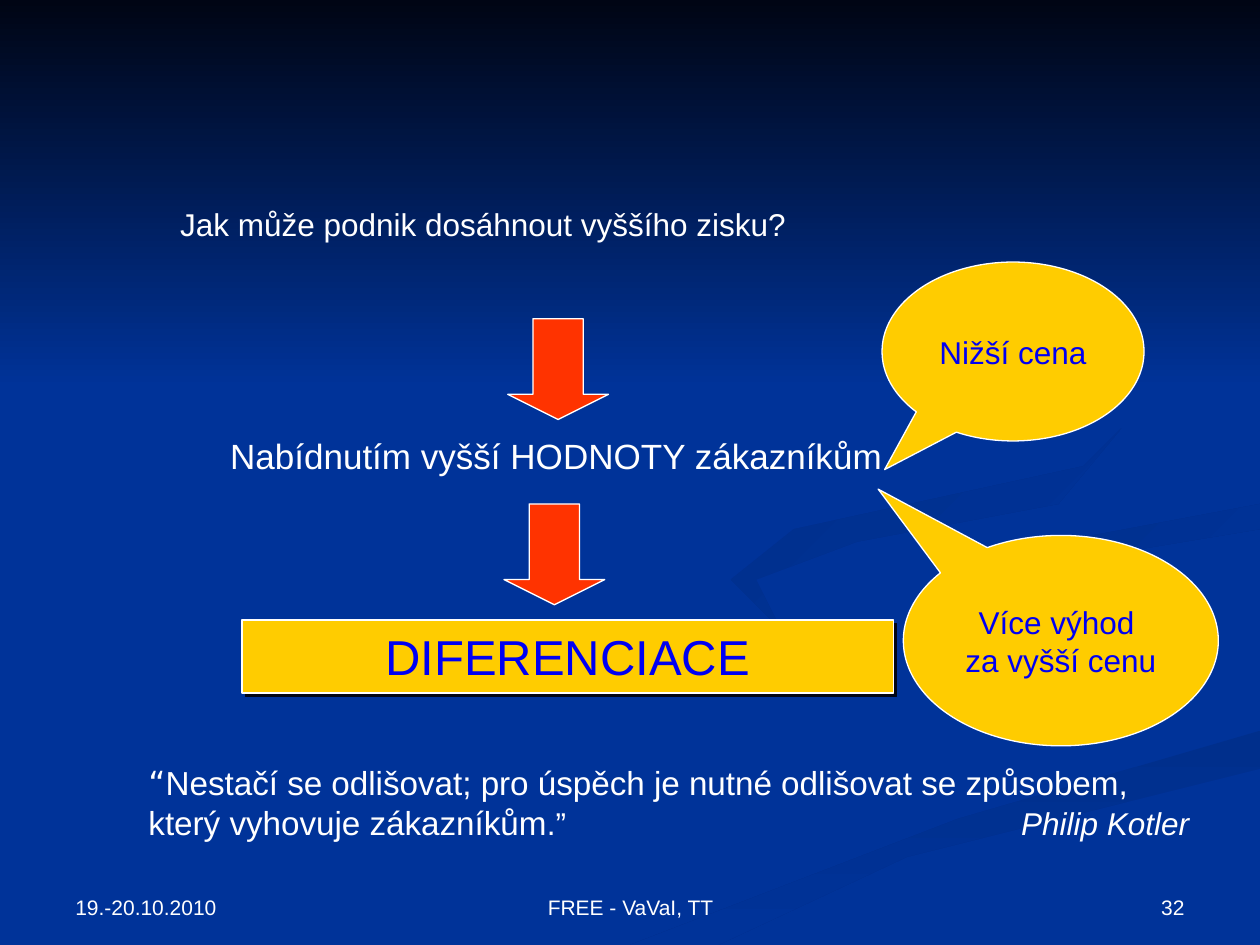
from dataclasses import dataclass
from typing import Any, NamedTuple

from lxml.etree import SubElement
from pptx import Presentation
from pptx.dml.color import RGBColor
from pptx.enum.shapes import MSO_SHAPE
from pptx.enum.text import MSO_ANCHOR, PP_ALIGN
from pptx.oxml.ns import qn
from pptx.util import Inches, Pt


@dataclass(frozen=True)
class Theme:
    background: str = "003399"
    shade: str = "002F8C"
    night: str = "000514"
    white: str = "FFFFFF"
    yellow: str = "FFCC00"
    red: str = "FF3300"
    blue: str = "0000F2"
    font: str = "Arial"
    quote_font: str = "DejaVu Sans"
    footer: float = 12
    body: float = 18
    quote: float = 19
    answer: float = 20
    banner: float = 28
    outline: float = 0.75


THEME = Theme()


class Box(NamedTuple):
    left: float
    top: float
    width: float
    height: float


class Run(NamedTuple):
    text: str
    size: float
    font: str = THEME.font
    italic: bool = False


class Wave(NamedTuple):
    angle: int
    points: tuple[tuple[float, float], ...]


@dataclass(frozen=True)
class Label:
    box: Box
    paragraphs: tuple[tuple[Run, ...], ...]
    alignment: Any = PP_ALIGN.LEFT
    anchor: Any = MSO_ANCHOR.TOP
    color: str = THEME.white
    wrap: bool = True


@dataclass(frozen=True)
class Figure:
    kind: Any
    box: Box
    fill: str
    adjustments: tuple[float, ...] = ()
    label: Label | None = None


def apply(target: Any, values: dict[str, Any]) -> None:
    for name, value in values.items():
        setattr(target, name, value)


def write(shape: Any, label: Label) -> None:
    frame = shape.text_frame
    apply(frame, {"word_wrap": label.wrap, "vertical_anchor": label.anchor})
    for index, runs in enumerate(label.paragraphs):
        paragraph = frame.add_paragraph() if index else frame.paragraphs[0]
        apply(paragraph, {"alignment": label.alignment, "space_before": Pt(0)})
        for item in runs:
            run = paragraph.add_run()
            run.text = item.text
            apply(run.font, {"name": item.font, "size": Pt(item.size), "italic": item.italic})
            run.font.color.rgb = RGBColor.from_string(label.color)


def draw_label(slide: Any, label: Label) -> Any:
    shape = slide.shapes.add_textbox(*map(Inches, label.box))
    write(shape, label)
    return shape


def draw_figure(slide: Any, figure: Figure) -> Any:
    shape = slide.shapes.add_shape(figure.kind, *map(Inches, figure.box))
    shape.shadow.inherit = False
    for index, value in enumerate(figure.adjustments):
        shape.adjustments[index] = value
    shape.fill.solid()
    shape.fill.fore_color.rgb = RGBColor.from_string(figure.fill)
    shape.line.color.rgb = RGBColor.from_string(THEME.white)
    shape.line.width = Pt(THEME.outline)
    if figure.label:
        write(shape, figure.label)
    return shape


def shade(shape: Any, start: str, end: str, angle: int) -> None:
    shape.shadow.inherit = False
    shape.line.fill.background()
    shape.fill.gradient()
    shape.fill.gradient_angle = -angle % 360
    for stop, color in zip(shape.fill.gradient_stops, (start, end)):
        stop.color.rgb = RGBColor.from_string(color)


def draw_wave(slide: Any, wave: Wave) -> None:
    first, *others = [(Inches(x), Inches(y)) for x, y in wave.points]
    builder = slide.shapes.build_freeform(*first, scale=1.0)
    builder.add_line_segments(others, close=True)
    shade(builder.convert_to_shape(), THEME.shade, THEME.background, wave.angle)


def add_hard_shadow(shape: Any) -> None:
    effects = shape._element.spPr.find(qn("a:effectLst"))
    shadow = SubElement(effects, qn("a:outerShdw"), dist=str(Pt(2.8)), dir="2700000", algn="ctr", rotWithShape="0")
    SubElement(shadow, qn("a:srgbClr"), val=THEME.night)


def add_right_tab(paragraph: Any, position: float) -> None:
    tabs = SubElement(paragraph._p.get_or_add_pPr(), qn("a:tabLst"))
    SubElement(tabs, qn("a:tab"), pos=str(Inches(position)), algn="r")


def remove_bullet(paragraph: Any) -> None:
    properties = paragraph._p.get_or_add_pPr()
    for name in ("marL", "indent"):
        properties.set(name, "0")
    SubElement(properties, qn("a:buNone"))


def line(text: str, size: float) -> tuple[Run, ...]:
    return (Run(text, size),)


def callout(box: Box, adjustments: tuple[float, float], *lines: str) -> Figure:
    paragraphs = tuple(line(text, THEME.body) for text in lines)
    label = Label(box, paragraphs, PP_ALIGN.CENTER, MSO_ANCHOR.MIDDLE, THEME.blue, False)
    return Figure(MSO_SHAPE.OVAL_CALLOUT, box, THEME.yellow, adjustments, label)


WAVES = (
    Wave(90, ((5, 7.5), (5.7, 7.5), (7.2, 6.8), (10, 6.1), (10, 5.8), (7.6, 6.5))),
    Wave(45, ((7.8, 4.6), (8.2, 4.9), (8.1, 4.7), (8.8, 4.4), (10, 4.2), (10, 4), (8.4, 4.3))),
    Wave(45, ((6.8, 4.3), (8.4, 4), (8.9, 3.4), (8.6, 3.7), (6.3, 4.2), (5.8, 4.6), (6.2, 5), (6, 4.6))),
)
QUESTION = Label(Box(1.33, 1.58, 8.08, 5), (line("Jak může podnik dosáhnout vyššího zisku?", THEME.body),))
ANSWER = Label(Box(1.33, 3.4, 6.17, 0.44), (line("Nabídnutím vyšší HODNOTY zákazníkům", THEME.answer),), PP_ALIGN.CENTER)
BANNER_BOX = Box(1.92, 4.92, 5.17, 0.58)
BANNER = Figure(MSO_SHAPE.RECTANGLE, BANNER_BOX, THEME.yellow, label=Label(
    BANNER_BOX, (line("DIFERENCIACE", THEME.banner),), PP_ALIGN.CENTER, color=THEME.blue))
FIGURES = (
    *(Figure(MSO_SHAPE.DOWN_ARROW, Box(left, top, 0.8, 0.8), THEME.red)
      for left, top in ((4.03, 2.53), (4, 4))),
    callout(Box(7, 2.08, 2.08, 1.42), (-0.49, 0.66), "Nižší cena"),
    callout(Box(7.17, 4.25, 2.5, 1.67), (-0.58, -0.72), "Více výhod ", "za vyšší cenu"),
)
ARROW_HEAD = (0.5, 0.25)
QUOTE = Label(Box(1.08, 6, 8.58, 0.74), ((
    Run("“", THEME.quote, THEME.quote_font),
    Run("Nestačí se odlišovat; pro úspěch je nutné odlišovat se způsobem, který vyhovuje zákazníkům", THEME.quote),
    Run(".”\t", THEME.body),
    Run("Philip Kotler", THEME.body, italic=True)),))
FOOTERS = tuple(
    Label(Box(left, 6.83, width, 0.52), (line(text, THEME.footer),), alignment, MSO_ANCHOR.BOTTOM)
    for left, width, text, alignment in (
        (0.5, 2.33, "19.-20.10.2010", PP_ALIGN.LEFT),
        (7.17, 2.33, "32", PP_ALIGN.RIGHT),
        (3.42, 3.17, "FREE - VaVaI, TT", PP_ALIGN.CENTER)))


def main() -> None:
    presentation = Presentation()
    apply(presentation, {"slide_width": Inches(10), "slide_height": Inches(7.5)})
    slide = presentation.slides.add_slide(presentation.slide_layouts[1])
    slide.background.fill.solid()
    slide.background.fill.fore_color.rgb = RGBColor.from_string(THEME.background)
    title, body = slide.placeholders
    title._element.getparent().remove(title._element)
    for wave in WAVES:
        draw_wave(slide, wave)
    sky = slide.shapes.add_shape(MSO_SHAPE.RECTANGLE, 0, 0, Inches(10), Inches(3.08))
    shade(sky, THEME.night, THEME.background, 90)
    apply(body, {name: Inches(value) for name, value in QUESTION.box._asdict().items()})
    write(body, QUESTION)
    remove_bullet(body.text_frame.paragraphs[0])
    slide.shapes._spTree.append(body._element)
    add_hard_shadow(draw_figure(slide, BANNER))
    draw_label(slide, ANSWER)
    for figure in FIGURES:
        shape = draw_figure(slide, figure)
        if figure.kind == MSO_SHAPE.DOWN_ARROW:
            shape.adjustments[0], shape.adjustments[1] = ARROW_HEAD
    add_right_tab(draw_label(slide, QUOTE).text_frame.paragraphs[0], 8.26)
    for footer in FOOTERS:
        draw_label(slide, footer)
    presentation.save("out.pptx")


if __name__ == "__main__":
    main()
